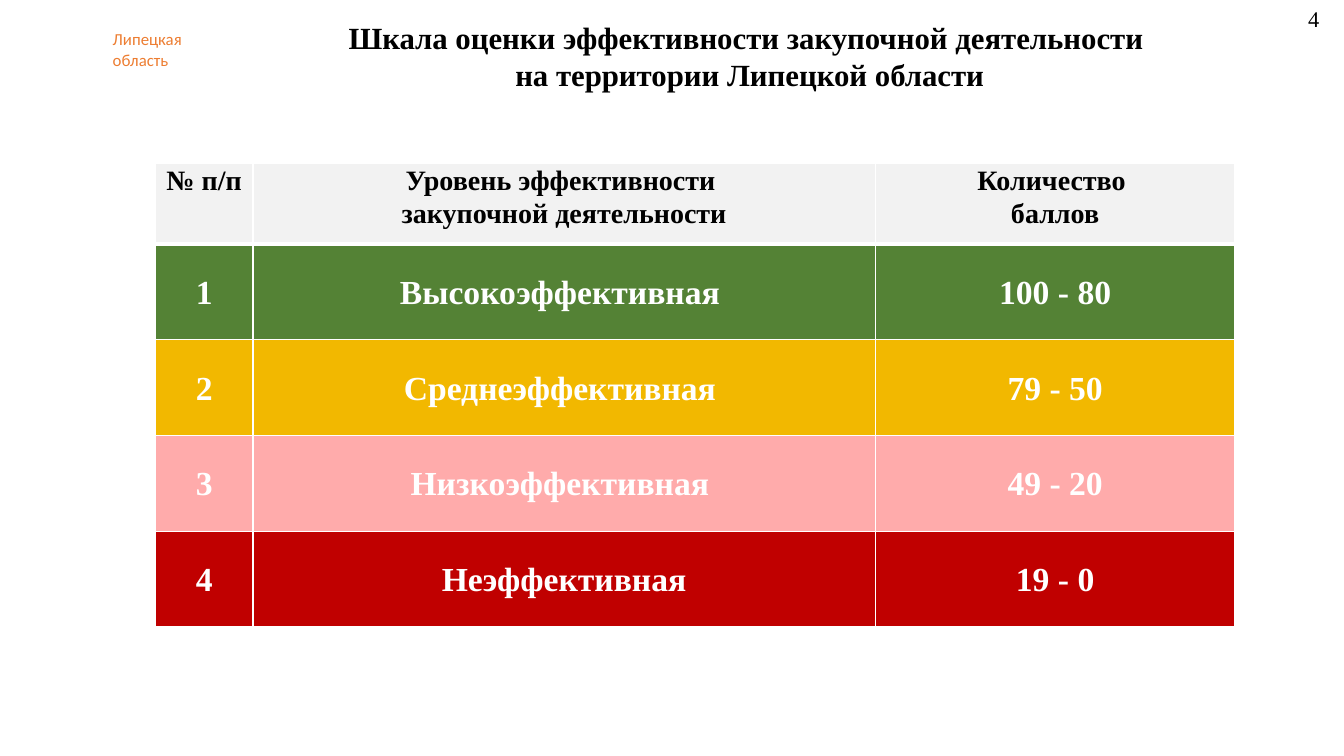
from dataclasses import dataclass
from typing import Optional

import lxml.etree
import pptx
import pptx.dml.color
import pptx.enum.text
import pptx.oxml.ns
import pptx.util

Align = pptx.enum.text.PP_ALIGN
Anchor = pptx.enum.text.MSO_ANCHOR


@dataclass(frozen=True)
class Theme:
    serif: str = "Times New Roman"
    sans: str = "Calibri"
    black: str = "000000"
    white: str = "FFFFFF"
    orange: str = "ED7D31"
    header_fill: str = "F2F2F2"
    label_size: int = 12
    number_size: int = 16
    header_size: int = 20
    title_size: int = 22
    body_size: int = 24
    border: int = 1
    header_border: int = 3


@dataclass(frozen=True)
class Style:
    font: str
    size: int
    color: str
    bold: bool = False
    align: Optional[Align] = None
    line_spacing: Optional[float] = None


@dataclass(frozen=True)
class TextBox:
    """Place and size are percentages of the slide's width and height."""
    left: float
    top: float
    width: float
    height: float
    text: str
    style: Style


@dataclass(frozen=True)
class Level:
    number: str
    name: str
    points: str
    fill: str


THEME = Theme()
SLIDE_W = pptx.util.Inches(13.33)
SLIDE_H = pptx.util.Inches(7.5)

HEADER_STYLE = Style(THEME.serif, THEME.header_size, THEME.black, True, Align.CENTER, 1.07)
BODY_STYLE = Style(THEME.serif, THEME.body_size, THEME.white, True, Align.CENTER, 1.07)

TEXT_BOXES = [
    TextBox(7.65, 3.2, 6.83, 6.67, "Липецкая\nобласть",
            Style(THEME.sans, THEME.label_size, THEME.orange)),
    TextBox(11.55, 1.87, 88.45, 11.2,
            "Шкала оценки эффективности закупочной деятельности \n"
            "на территории Липецкой области",
            Style(THEME.serif, THEME.title_size, THEME.black, True, Align.CENTER)),
    TextBox(96.6, 0, 3.4, 4.93, "4",
            Style(THEME.serif, THEME.number_size, THEME.black)),
]

# Table grid, in percent of the slide
TABLE_LEFT, TABLE_TOP = 11.55, 21.6
COLUMNS = [7.28, 46.29, 26.78]
HEADER_ROW, LEVEL_ROW = 10.67, 12.67

LEVELS = [
    Level("№ п/п", "Уровень эффективности \nзакупочной деятельности",
          "Количество \nбаллов", THEME.header_fill),
    Level("1", "Высокоэффективная ", "100 - 80", "548235"),
    Level("2", "Среднеэффективная ", "79 - 50", "F2B800"),
    Level("3", "Низкоэффективная ", "49 - 20", "FFABAB"),
    Level("4", "Неэффективная", "19 - 0", "C00000"),
]


def across(percent: float) -> int:
    return round(SLIDE_W * percent / 100)


def down(percent: float) -> int:
    return round(SLIDE_H * percent / 100)


def rgb(color: str) -> pptx.dml.color.RGBColor:
    return pptx.dml.color.RGBColor.from_string(color)


def write_text(tf, text: str, style: Style) -> None:
    tf.text = text
    for p in tf.paragraphs:
        p.alignment = style.align
        p.line_spacing = style.line_spacing
        for r in p.runs:
            r.font.name = style.font
            r.font.size = pptx.util.Pt(style.size)
            r.font.bold = style.bold
            r.font.color.rgb = rgb(style.color)


def add_text_box(s, box: TextBox) -> None:
    sp = s.shapes.add_textbox(across(box.left), down(box.top),
                              across(box.width), down(box.height))
    tf = sp.text_frame
    tf.word_wrap = True
    tf.auto_size = pptx.enum.text.MSO_AUTO_SIZE.SHAPE_TO_FIT_TEXT
    write_text(tf, box.text, box.style)


def add_border(cell, side: str, width: int) -> None:
    qn = pptx.oxml.ns.qn
    tc_pr = cell._tc.get_or_add_tcPr()
    ln = lxml.etree.SubElement(tc_pr, qn(f"a:ln{side}"), w=str(pptx.util.Pt(width)))
    fill = lxml.etree.SubElement(ln, qn("a:solidFill"))
    lxml.etree.SubElement(fill, qn("a:srgbClr"), val=THEME.white)


def format_cell(cell, text: str, fill: str, row: int) -> None:
    header = row == 0
    cell.margin_left = cell.margin_right = pptx.util.Inches(0.07)
    cell.margin_top = cell.margin_bottom = 0
    cell.vertical_anchor = Anchor.TOP if header else Anchor.MIDDLE
    write_text(cell.text_frame, text, HEADER_STYLE if header else BODY_STYLE)
    # Borders come before the fill in the cell properties
    for side in "LRTB":
        under_header = (row, side) in [(0, "B"), (1, "T")]
        add_border(cell, side, THEME.header_border if under_header else THEME.border)
    cell.fill.solid()
    cell.fill.fore_color.rgb = rgb(fill)


def add_scale(s, levels: list[Level]) -> None:
    heights = [HEADER_ROW] + [LEVEL_ROW] * (len(levels) - 1)
    frame = s.shapes.add_table(len(levels), len(COLUMNS), across(TABLE_LEFT), down(TABLE_TOP),
                               across(sum(COLUMNS)), down(sum(heights)))
    table = frame.table
    table.horz_banding = False
    for column, width in zip(table.columns, COLUMNS):
        column.width = across(width)
    for i, (level, height) in enumerate(zip(levels, heights)):
        table.rows[i].height = down(height)
        for j, text in enumerate((level.number, level.name, level.points)):
            format_cell(table.cell(i, j), text, level.fill, i)


def main() -> None:
    prs = pptx.Presentation()
    prs.slide_width, prs.slide_height = SLIDE_W, SLIDE_H
    s = prs.slides.add_slide(prs.slide_layouts[6])
    # Region label, title and page number
    for box in TEXT_BOXES:
        add_text_box(s, box)
    # Rating scale
    add_scale(s, LEVELS)
    prs.save("out.pptx")


if __name__ == "__main__":
    main()
